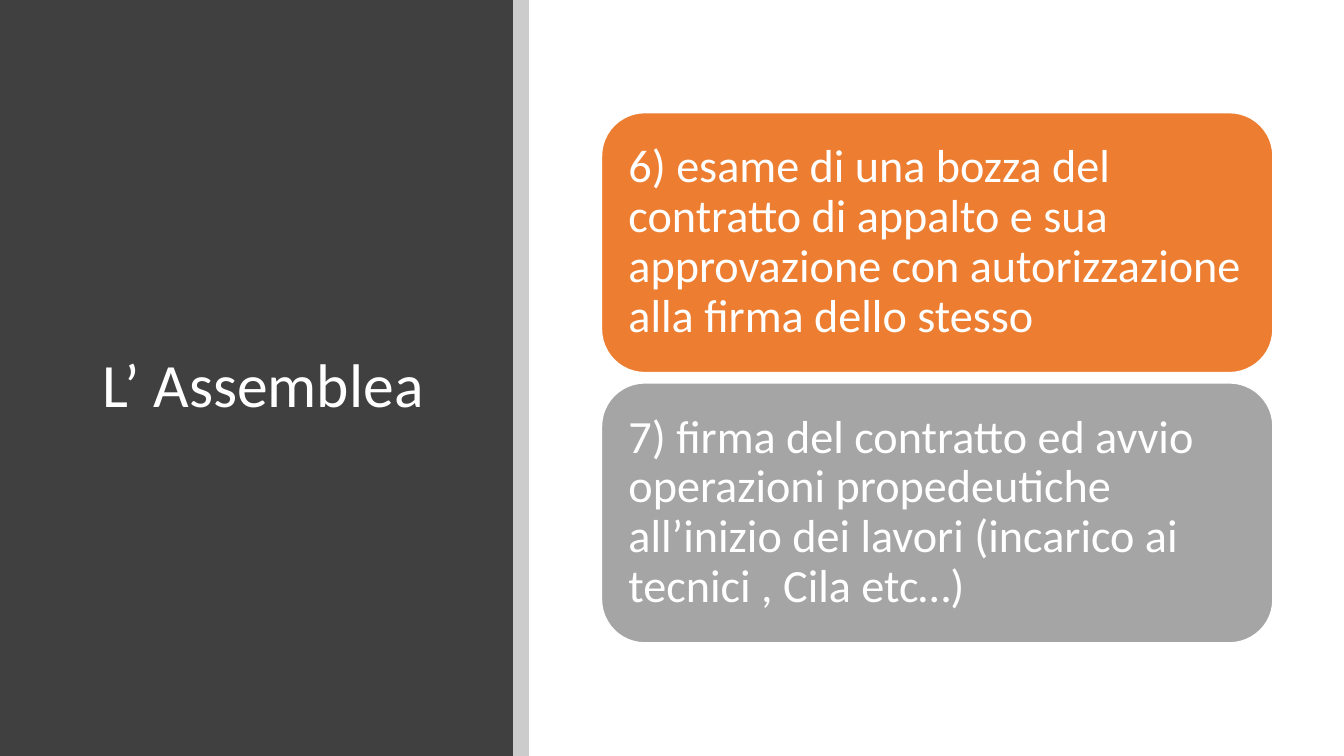
from dataclasses import dataclass

from lxml.etree import SubElement
from pptx import Presentation
from pptx.dml.color import RGBColor
from pptx.enum.shapes import MSO_SHAPE as Preset
from pptx.enum.text import MSO_ANCHOR as Anchor, PP_ALIGN as Align
from pptx.oxml.ns import qn
from pptx.shapes.autoshape import Shape
from pptx.slide import Slide
from pptx.util import Cm, Pt

COLORS = {
    "panel": "404040",
    "strip": "000000",
    "orange": "ED7D31",
    "grey": "A5A5A5",
    "white": "FFFFFF",
}
PAGE_WIDTH, PAGE_HEIGHT = 33.87, 19.05
PANEL_WIDTH, STRIP_WIDTH = 12.93, 0.4
STEP_LEFT, STEP_TOP = 15.16, 2.84
STEP_WIDTH, STEP_HEIGHT, STEP_GAP = 16.92, 6.55, 0.26
STEP_INSET = 0.36


@dataclass
class Step:
    text: str
    color: str


STEPS = [
    Step("6) esame di una bozza del contratto di appalto e sua approvazione "
         "con autorizzazione alla firma dello stesso", "orange"),
    Step("7) firma del contratto ed avvio operazioni propedeutiche "
         "all’inizio dei lavori (incarico ai tecnici , Cila etc…)", "grey"),
]


def rgb(name: str) -> RGBColor:
    return RGBColor.from_string(COLORS[name])


def add_block(page: Slide, preset: Preset, left: float, top: float,
              width: float, height: float, color: str) -> Shape:
    """Add a filled shape without line or shadow; lengths in centimetres."""
    block = page.shapes.add_shape(preset, Cm(left), Cm(top), Cm(width), Cm(height))
    block.shadow.inherit = False
    block.fill.solid()
    block.fill.fore_color.rgb = rgb(color)
    block.line.fill.background()
    return block


def set_opacity(block: Shape, percent: int) -> None:
    color = block.fill._xPr.find(qn("a:solidFill"))[0]
    SubElement(color, qn("a:alpha"), val=str(percent * 1000))


def write_text(box: Shape, text: str, size: float) -> None:
    frame = box.text_frame
    frame.word_wrap = True
    frame.vertical_anchor = Anchor.MIDDLE
    para = frame.paragraphs[0]
    para.text = text
    para.alignment = Align.LEFT
    para.line_spacing = 0.9
    para.font.name = "Calibri"
    para.font.size = Pt(size)
    para.font.color.rgb = rgb("white")


def add_step(page: Slide, step: Step, top: float) -> None:
    box = add_block(page, Preset.ROUNDED_RECTANGLE, STEP_LEFT, top,
                    STEP_WIDTH, STEP_HEIGHT, step.color)
    box.line.color.rgb = rgb("white")
    box.line.width = Pt(1)
    frame = box.text_frame
    frame.margin_left = frame.margin_right = Cm(STEP_INSET)
    frame.margin_top = frame.margin_bottom = Cm(STEP_INSET)
    write_text(box, step.text, 33)


def main() -> None:
    deck = Presentation()
    deck.slide_width, deck.slide_height = Cm(PAGE_WIDTH), Cm(PAGE_HEIGHT)
    page = deck.slides.add_slide(deck.slide_layouts[6])

    add_block(page, Preset.RECTANGLE, 0, 0, PANEL_WIDTH, PAGE_HEIGHT, "panel")
    title = page.shapes.add_textbox(Cm(2.34), Cm(2.26), Cm(9.27), Cm(15))
    write_text(title, "L’ Assemblea", 44)
    strip = add_block(page, Preset.RECTANGLE, PANEL_WIDTH, 0,
                      STRIP_WIDTH, PAGE_HEIGHT, "strip")
    set_opacity(strip, 20)

    for index, step in enumerate(STEPS):
        add_step(page, step, STEP_TOP + index * (STEP_HEIGHT + STEP_GAP))

    deck.save("out.pptx")


if __name__ == "__main__":
    main()
